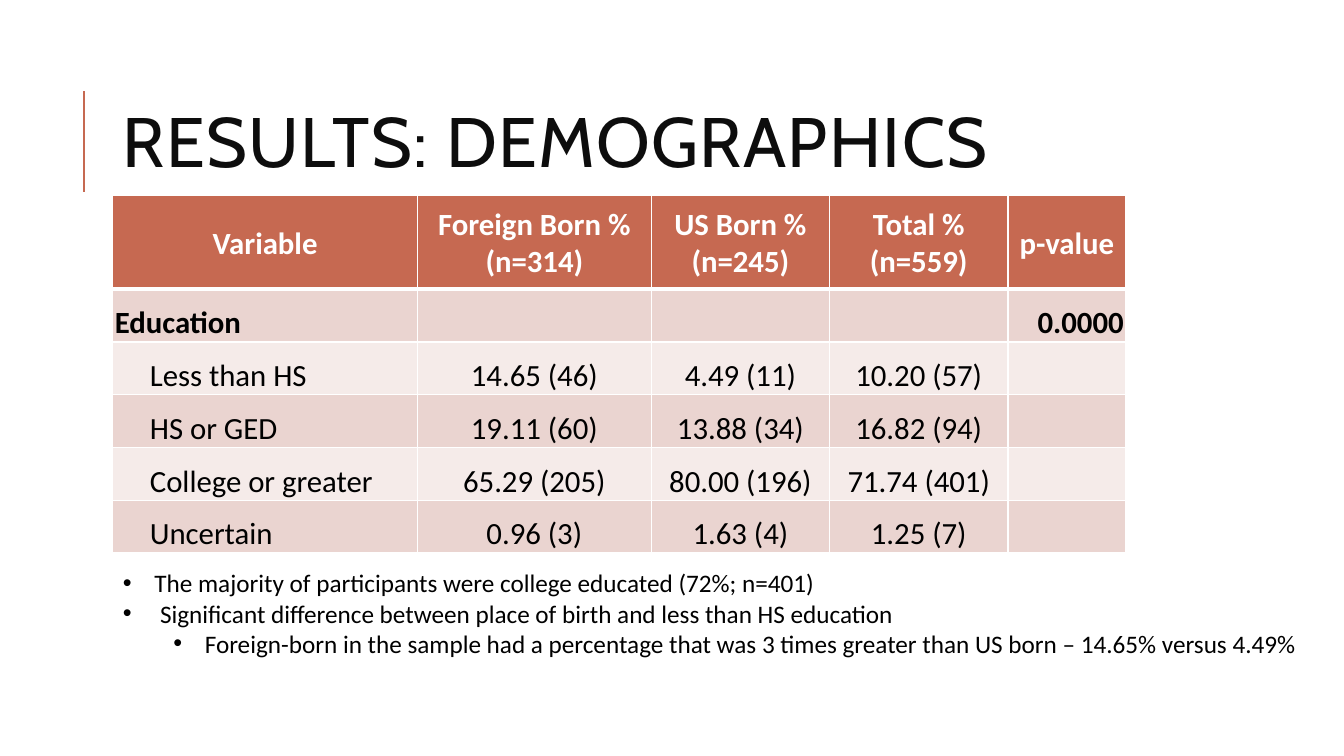
import pptx
import pptx.util
import pptx.dml.color
import pptx.enum.shapes
import pptx.enum.text
import pptx.oxml
import pptx.oxml.ns
import lxml.etree

Pt = pptx.util.Pt
Align = pptx.enum.text.PP_ALIGN
Anchor = pptx.enum.text.MSO_ANCHOR

# Content
TITLE = "RESULTS: DEMOGRAPHICS"
HEADER = ["Variable", "Foreign Born %\v(n=314)", "US Born %\v(n=245)", "Total %\v(n=559)", "p-value"]
GROUP = ["Education", "", "", "", "0.0000"]
LEVELS = [
    ["Less than HS", "14.65 (46)", "4.49 (11)", "10.20 (57)", ""],
    ["HS or GED", "19.11 (60)", "13.88 (34)", "16.82 (94)", ""],
    ["College or greater", "65.29 (205)", "80.00 (196)", "71.74 (401)", ""],
    ["Uncertain", "0.96 (3)", "1.63 (4)", "1.25 (7)", ""],
]
# Text, outline level, left indent, hanging indent
FINDINGS = [
    ("The majority of participants were college educated (72%; n=401)", 0, 22.5, 22.5),
    ("Significant difference between place of birth and less than HS education", 0, 26.5, 26.5),
    ("Foreign-born in the sample had a percentage that was 3 times greater than US born – 14.65% versus 4.49%",
     1, 58.5, 22.5),
]

# Layout and colours
LEFT = 80.6
COLUMN_WIDTHS = [217.6, 167, 127.4, 127.4, 84.2]
HEADER_HEIGHT, ROW_HEIGHT = 67, 37.7
LEVEL_INDENT = 25
ACCENT, WHITE, BLACK, TITLE_COLOR = "C66951", "FFFFFF", "000000", "0D0D0D"
BANDS = ["EAD4D0", "F5EBE9"]


def color(value):
    return pptx.dml.color.RGBColor.from_string(value)


def place(shape, left, top, width, height):
    shape.left, shape.top, shape.width, shape.height = Pt(left), Pt(top), Pt(width), Pt(height)


def format_runs(paragraph, font_name, size, value, bold=False):
    for run in paragraph.runs:
        run.font.name, run.font.size, run.font.bold = font_name, Pt(size), bold
        run.font.color.rgb = color(value)


def add_borders(cell, top, bottom):
    properties = cell._tc.get_or_add_tcPr()
    for side, width in (("L", 1), ("R", 1), ("T", top), ("B", bottom)):
        line = pptx.oxml.parse_xml(
            f'<a:ln{side} {pptx.oxml.ns.nsdecls("a")} w="{Pt(width)}">'
            f'<a:solidFill><a:srgbClr val="{WHITE}"/></a:solidFill></a:ln{side}>')
        properties.append(line)


presentation = pptx.Presentation()
presentation.slide_width, presentation.slide_height = Pt(960), Pt(540)
slide = presentation.slides.add_slide(presentation.slide_layouts[1])

# Accent line beside the title
accent = slide.shapes.add_connector(
    pptx.enum.shapes.MSO_CONNECTOR.STRAIGHT, Pt(60), Pt(137), Pt(60), Pt(65))
accent.line.color.rgb = color(ACCENT)
accent.line.width = Pt(1.5)
lxml.etree.SubElement(accent._element.spPr, pptx.oxml.ns.qn("a:effectLst"))

# Title
title = slide.shapes.title
place(title, LEFT, 46, 765, 118)
title.text_frame.text = TITLE
title.text_frame.vertical_anchor = Anchor.MIDDLE
title.text_frame.auto_size = pptx.enum.text.MSO_AUTO_SIZE.NONE
heading = title.text_frame.paragraphs[0]
heading.alignment = Align.LEFT
heading.line_spacing = 0.8
format_runs(heading, "Cabin", 50, TITLE_COLOR)
heading.runs[0]._r.get_or_add_rPr().set("spc", "100")

# Demographics table
rows = [HEADER, GROUP] + LEVELS
frame = slide.shapes.add_table(
    len(rows), len(HEADER), Pt(LEFT), Pt(139.7), Pt(sum(COLUMN_WIDTHS)),
    Pt(HEADER_HEIGHT + ROW_HEIGHT * (len(rows) - 1)))
table = frame.table
for column, width in zip(table.columns, COLUMN_WIDTHS):
    column.width = Pt(width)
for row_index, values in enumerate(rows):
    is_header, is_level = row_index == 0, row_index > 1
    table.rows[row_index].height = Pt(HEADER_HEIGHT if is_header else ROW_HEIGHT)
    for column_index, value in enumerate(values):
        cell = table.cell(row_index, column_index)
        add_borders(cell, 3 if row_index == 1 else 1, 3 if is_header else 1)
        cell.fill.solid()
        cell.fill.fore_color.rgb = color(ACCENT if is_header else BANDS[(row_index - 1) % 2])
        if not value:
            continue
        is_label = column_index == 0 and not is_header
        cell.margin_left = Pt(1.5 + (LEVEL_INDENT if is_label and is_level else 0))
        cell.margin_right = cell.margin_top = Pt(1.5)
        cell.margin_bottom = 0
        cell.vertical_anchor = Anchor.MIDDLE if is_header else Anchor.BOTTOM
        cell.text_frame.text = value
        paragraph = cell.text_frame.paragraphs[0]
        if is_label:
            paragraph.alignment = Align.LEFT
        elif row_index == 1:
            paragraph.alignment = Align.RIGHT
        else:
            paragraph.alignment = Align.CENTER
        format_runs(paragraph, "Calibri", 22, WHITE if is_header else BLACK, not is_level)

# Findings list
body = slide.placeholders[1]
place(body, LEFT, 401.8, 868, 73)
body.text_frame.text = "\n".join(finding[0] for finding in FINDINGS)
body.text_frame.auto_size = pptx.enum.text.MSO_AUTO_SIZE.NONE
for paragraph, (_, level, indent, hanging) in zip(body.text_frame.paragraphs, FINDINGS):
    paragraph.level = level
    paragraph.space_before = Pt(0)
    format_runs(paragraph, "Calibri", 18, BLACK)
    properties = paragraph._p.get_or_add_pPr()
    properties.set("marL", str(Pt(indent)))
    properties.set("indent", str(-Pt(hanging)))
    bullet_font = lxml.etree.SubElement(properties, pptx.oxml.ns.qn("a:buFont"))
    bullet_font.set("typeface", "Arial")
    lxml.etree.SubElement(properties, pptx.oxml.ns.qn("a:buChar")).set("char", "•")

presentation.save("out.pptx")
